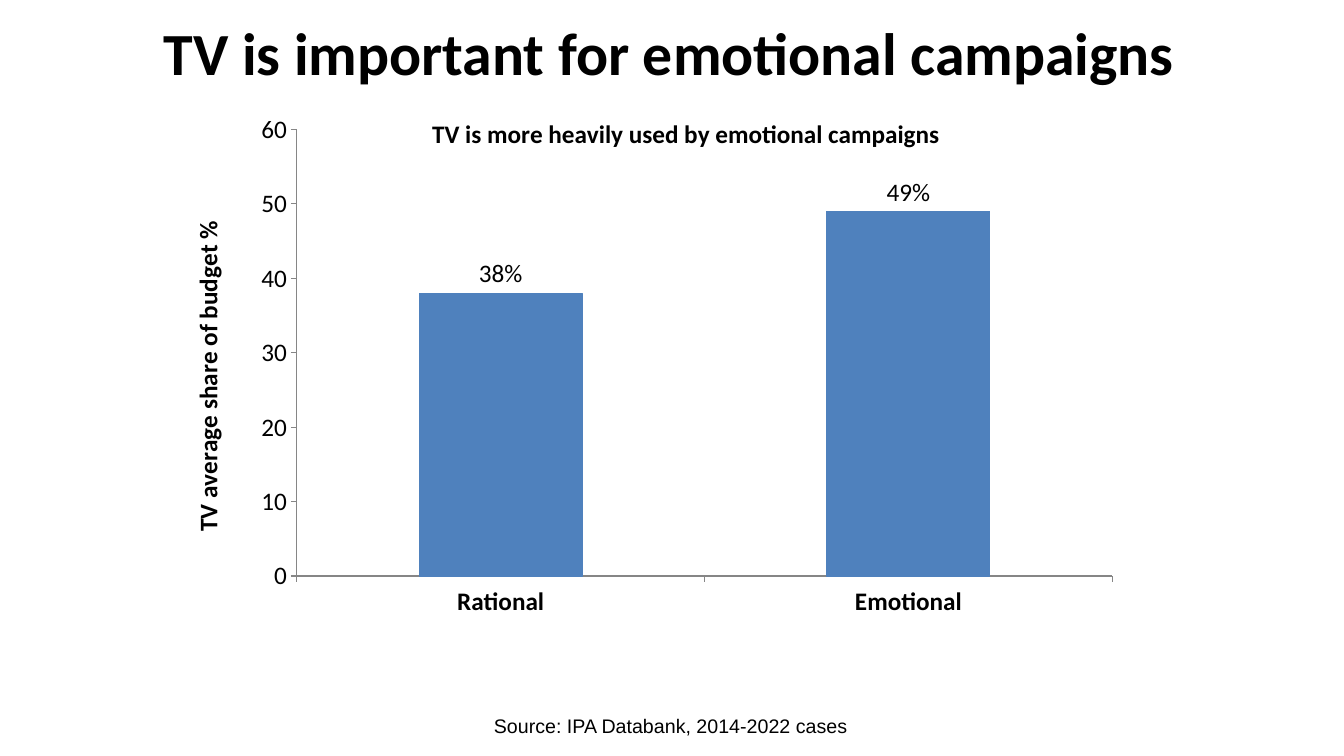
from dataclasses import dataclass

from pptx import Presentation
from pptx.chart.data import CategoryChartData
from pptx.dml.color import RGBColor
from pptx.enum.chart import XL_CHART_TYPE as ChartType
from pptx.enum.chart import XL_LABEL_POSITION as LabelPosition
from pptx.enum.chart import XL_TICK_MARK as TickMark
from pptx.enum.text import MSO_ANCHOR, MSO_AUTO_SIZE, PP_ALIGN
from pptx.oxml import parse_xml
from pptx.oxml.ns import nsdecls, qn
from pptx.util import Inches, Pt


@dataclass(frozen=True)
class Theme:
    text: RGBColor = RGBColor(0x00, 0x00, 0x00)
    bar: RGBColor = RGBColor(0x4F, 0x81, 0xBD)
    axis: RGBColor = RGBColor(0x86, 0x86, 0x86)
    main_font: str = "Calibri"
    source_font: str = "Arial"
    title_size: float = 42.7
    chart_size: float = 18
    source_size: float = 14
    hairline: float = 0.75


THEME = Theme()
BUDGET_SHARES = {"Rational": 38, "Emotional": 49}


def style_font(font, name, size, bold=False):
    formats = {"name": name, "size": Pt(size), "bold": bold}
    for attribute, value in formats.items():
        setattr(font, attribute, value)
    font.color.rgb = THEME.text


def place_in_chart(element, **fractions):
    """Give a chart part a fixed place, in fractions of the chart area."""
    old_layout = element.find(qn("c:layout"))
    modes = "".join(f'<c:{key}Mode val="edge"/>' for key in "xy")
    sizes = "".join(f'<c:{key} val="{value}"/>' for key, value in fractions.items())
    target = '<c:layoutTarget val="inner"/>' if "w" in fractions else ""
    layout = parse_xml(
        f'<c:layout {nsdecls("c")}><c:manualLayout>{target}{modes}{sizes}'
        "</c:manualLayout></c:layout>"
    )
    if old_layout is None:
        element.insert(0, layout)
    else:
        element.replace(old_layout, layout)


def write_chart_title(title, text, x, y):
    title.text_frame.text = text
    style_font(title.text_frame.paragraphs[0].runs[0].font,
               THEME.main_font, THEME.chart_size, bold=True)
    place_in_chart(title.element, x=x, y=y)


def style_axis(axis, bold=False):
    axis.has_major_gridlines = False
    axis.major_tick_mark = TickMark.OUTSIDE
    axis.minor_tick_mark = TickMark.NONE
    axis.format.line.color.rgb = THEME.axis
    axis.format.line.width = Pt(THEME.hairline)
    style_font(axis.tick_labels.font, THEME.main_font, THEME.chart_size, bold)


def write_title(slide, text):
    title = slide.shapes.title
    title.left, title.top = Inches(0.64), Inches(0)
    title.width, title.height = Inches(12), Inches(1.03)
    frame = title.text_frame
    frame.text = text
    frame.vertical_anchor = MSO_ANCHOR.MIDDLE
    frame.auto_size = MSO_AUTO_SIZE.NONE
    heading = frame.paragraphs[0]
    heading.alignment = PP_ALIGN.CENTER
    style_font(heading.runs[0].font, THEME.main_font, THEME.title_size, bold=True)


def add_budget_chart(slide):
    budget_data = CategoryChartData(number_format="0")
    budget_data.categories = list(BUDGET_SHARES)
    budget_data.add_series("Series 1", list(BUDGET_SHARES.values()))
    chart = slide.shapes.add_chart(
        ChartType.COLUMN_CLUSTERED, Inches(0.64), Inches(0.88),
        Inches(12), Inches(5.77), budget_data,
    ).chart
    chart.has_legend = False
    style_font(chart.font, THEME.main_font, THEME.chart_size)

    chart.has_title = True
    chart_title = chart.chart_title
    write_chart_title(chart_title, "TV is more heavily used by emotional campaigns",
                      x=0.3, y=0.04)
    chart_title.element.find(qn("c:overlay")).set("val", "1")
    plot_area = chart_title.element.getparent().find(qn("c:plotArea"))
    place_in_chart(plot_area, x=0.192, y=0.07, w=0.674, h=0.768)

    style_axis(chart.category_axis, bold=True)
    shares = chart.value_axis
    style_axis(shares)
    shares.minimum_scale, shares.maximum_scale, shares.major_unit = 0, 60, 10
    shares.tick_labels.number_format = "0"
    shares.tick_labels.number_format_is_linked = False
    shares.has_title = True
    write_chart_title(shares.axis_title, "TV average share of budget %", x=0.1, y=0.22)

    columns = chart.plots[0]
    columns.gap_width = 150
    columns.vary_by_categories = False
    bars = columns.series[0]
    bars.format.fill.solid()
    bars.format.fill.fore_color.rgb = THEME.bar
    bars.format.line.color.rgb = THEME.bar
    bars.format.line.width = Pt(THEME.hairline)
    labels = bars.data_labels
    label_formats = {
        "show_value": True,
        "number_format": '0"%"',
        "number_format_is_linked": False,
        "position": LabelPosition.OUTSIDE_END,
    }
    for attribute, value in label_formats.items():
        setattr(labels, attribute, value)
    style_font(labels.font, THEME.main_font, THEME.chart_size)


def add_source(slide, text):
    frame = slide.shapes.add_textbox(
        Inches(4.8), Inches(7.03), Inches(3.72), Inches(0.34)
    ).text_frame
    frame.text = text
    frame.word_wrap = False
    frame.auto_size = MSO_AUTO_SIZE.SHAPE_TO_FIT_TEXT
    style_font(frame.paragraphs[0].runs[0].font, THEME.source_font, THEME.source_size)


def main():
    deck = Presentation()
    deck.slide_width, deck.slide_height = Inches(13.33), Inches(7.5)
    title_only = deck.slide_layouts[5]
    slide = deck.slides.add_slide(title_only)
    write_title(slide, "TV is important for emotional campaigns")
    add_budget_chart(slide)
    add_source(slide, "Source: IPA Databank, 2014-2022 cases")
    deck.save("out.pptx")


if __name__ == "__main__":
    main()
